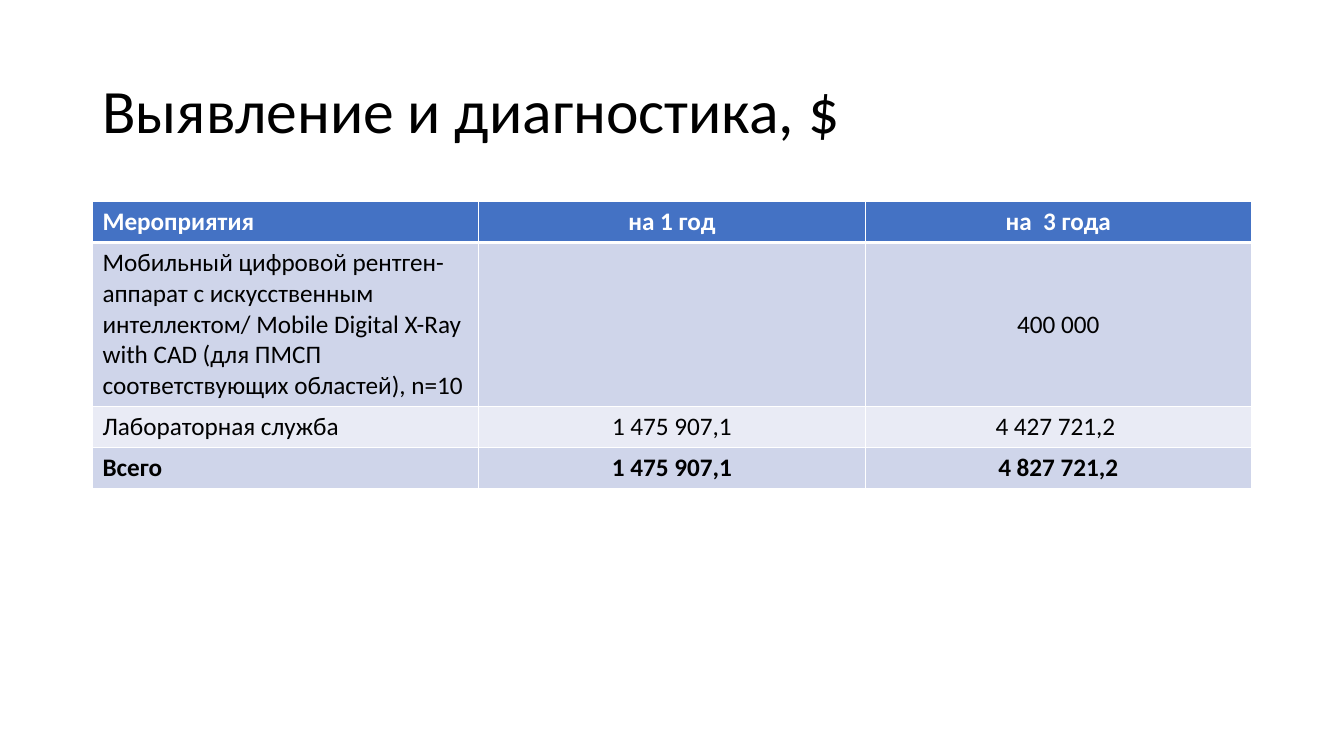
from lxml import etree
from pptx import Presentation
from pptx import util as u
from pptx.dml import color
from pptx.enum import text
from pptx.oxml import ns

WHITE, BLACK = "FFFFFF", "000000"


def paint(target, hex_code):
    """Give a fill a solid colour."""
    target.solid()
    target.fore_color.rgb = color.RGBColor.from_string(hex_code)


def add_border(cell, side, points):
    """Draw one white cell edge; edges must precede the cell fill."""
    edge = etree.SubElement(cell._tc.get_or_add_tcPr(), ns.qn(f"a:{side}"),
                            w=str(u.Pt(points)))
    solid = etree.SubElement(edge, ns.qn("a:solidFill"))
    etree.SubElement(solid, ns.qn("a:srgbClr"), val=WHITE)


deck = Presentation()
deck.slide_width, deck.slide_height = u.Cm(33.87), u.Cm(19.05)
page = deck.slides.add_slide(deck.slide_layouts[5])

# Title
title = page.shapes.title
title.left, title.top = u.Cm(2.33), u.Cm(1.01)
title.width, title.height = u.Cm(29.21), u.Cm(3.68)
title.text_frame.text = "Выявление и диагностика, $"
title.text_frame.vertical_anchor = text.MSO_ANCHOR.MIDDLE
title.text_frame.word_wrap = True
para = title.text_frame.paragraphs[0]
para.alignment = text.PP_ALIGN.LEFT
para.line_spacing = 0.9
para.font.size = u.Pt(44)
para.font.name = "Calibri"
paint(para.font.fill, BLACK)

# Table content: text, row height in cm, fill, bold
rows = [
    (("Мероприятия", "на 1 год", "на  3 года"), 1.03, "4472C4", True),
    (("Мобильный цифровой рентген-аппарат с искусственным интеллектом/ "
      "Mobile Digital X-Ray with CAD (для ПМСП соответствующих областей), n=10",
      "", "400 000"), 4.1, "CFD5EA", False),
    (("Лабораторная служба", "1 475 907,1", "4 427 721,2 "),
     1.03, "E9EBF5", False),
    (("Всего", "1 475 907,1", "4 827 721,2"), 1.03, "CFD5EA", True),
]
table = page.shapes.add_table(len(rows), 3, u.Cm(2.33), u.Cm(5.08),
                              u.Cm(29.21), u.Cm(7.19)).table

for row_index, (values, height, fill, bold) in enumerate(rows):
    table.rows[row_index].height = u.Cm(height)
    for column_index, value in enumerate(values):
        cell = table.cell(row_index, column_index)

        # Thick rule between the header and the body
        above = 3 if row_index == 1 else 1
        below = 3 if row_index == 0 else 1
        for side, points in (("lnL", 1), ("lnR", 1),
                             ("lnT", above), ("lnB", below)):
            add_border(cell, side, points)
        paint(cell.fill, fill)

        # Names on the left, centred amounts
        cell.text = value
        para = cell.text_frame.paragraphs[0]
        if column_index > 0:
            cell.vertical_anchor = text.MSO_ANCHOR.MIDDLE
            para.alignment = text.PP_ALIGN.CENTER
        para.font.size = u.Pt(18)
        para.font.name = "Calibri"
        para.font.bold = bold
        paint(para.font.fill, WHITE if row_index == 0 else BLACK)

deck.save("out.pptx")
